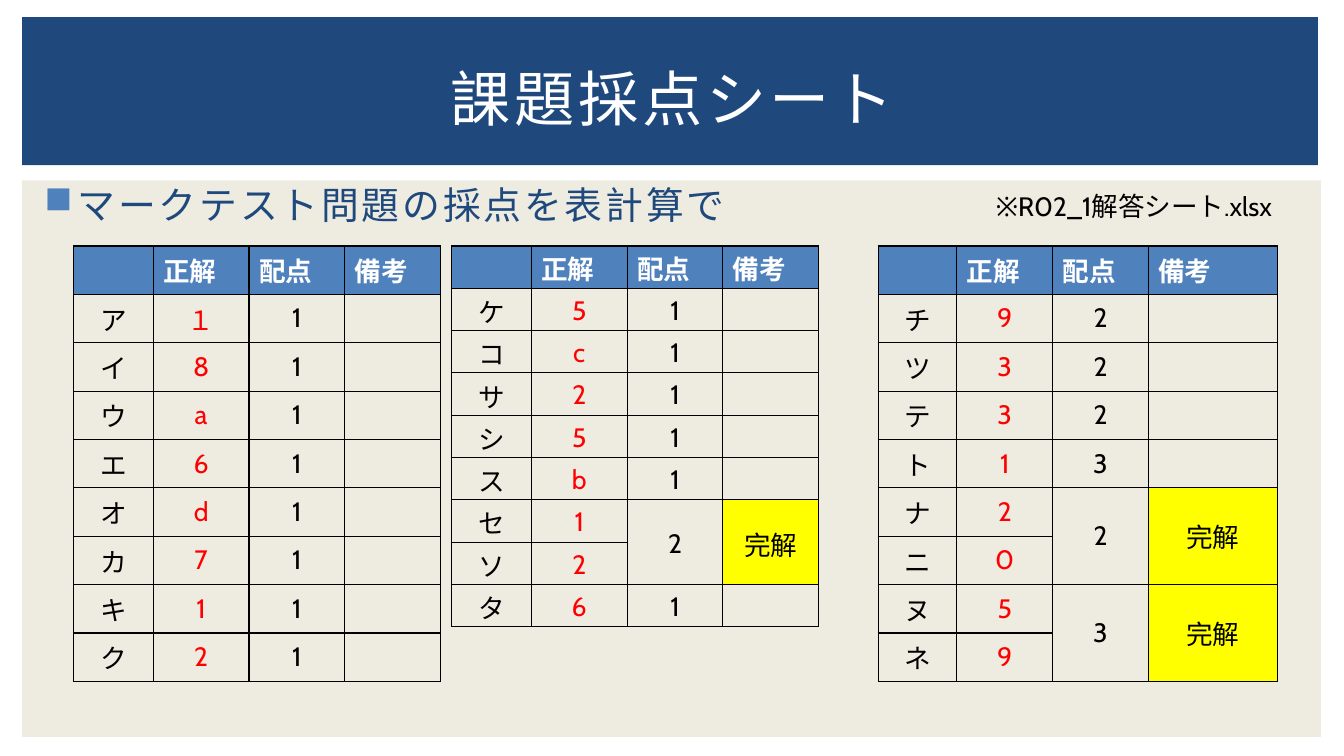
"""Build a slide of answer keys and points for a marked test."""
from dataclasses import dataclass

from pptx import Presentation
from pptx import util as u
from pptx.dml.color import RGBColor
from pptx.enum import shapes, text
from pptx.oxml import parse_xml
from pptx.oxml.ns import nsdecls

MID, LEFT = text.PP_ALIGN.CENTER, text.PP_ALIGN.LEFT


@dataclass(frozen=True)
class Theme:
    """Colours, fonts and type sizes of the slide."""
    navy: str = "1F497D"
    blue: str = "4F81BD"
    sand: str = "EEECE1"
    white: str = "FFFFFF"
    black: str = "000000"
    red: str = "FF0000"
    yellow: str = "FFFF00"
    font: str = "Cabin"
    kanji: str = "Noto Sans CJK JP"
    title: int = 43
    lead: int = 27
    base: int = 19


THEME = Theme()
HEADS = ("", "正解", "配点", "備考")
NARROW = (0.79, 0.95, 0.95, 0.95)
WIDE = (0.78, 0.95, 0.95, 1.28)


def paint(item, color):
    """Fill a shape or cell with one colour."""
    item.fill.solid()
    item.fill.fore_color.rgb = RGBColor.from_string(color)


def style(para, size, color, bold=False, align=LEFT, font=THEME.font):
    """Set the type of a paragraph."""
    para.alignment = align
    para.font.size = u.Pt(size)
    para.font.name = font
    para.font.bold = bold
    para.font.color.rgb = RGBColor.from_string(color)


def add_panel(slide, box, color):
    """Add a plain rectangle."""
    panel = slide.shapes.add_shape(shapes.MSO_SHAPE.RECTANGLE, *map(u.Inches, box))
    panel.shadow.inherit = False
    panel.line.fill.background()
    paint(panel, color)


def add_label(slide, box, words, size, color, pad=(0.13, 0.07), wrap=True,
              align=LEFT, anchor=text.MSO_ANCHOR.TOP, gap=0):
    """Add a line of text and return its paragraph."""
    frame = slide.shapes.add_textbox(*map(u.Inches, box)).text_frame
    frame.word_wrap = wrap
    frame.vertical_anchor = anchor
    frame.margin_left = frame.margin_right = u.Inches(pad[0])
    frame.margin_top = frame.margin_bottom = u.Inches(pad[1])
    para = frame.paragraphs[0]
    run = para.add_run()
    run.text = words
    style(para, size, color, align=align)
    if gap:
        run._r.get_or_add_rPr().set("spc", str(round(gap * 100)))
    return para


def add_bullet(para):
    """Give a paragraph a square bullet and a hanging indent."""
    props = para._p.get_or_add_pPr()
    props.set("marL", str(u.Inches(0.4)))
    props.set("indent", str(u.Inches(-0.33)))
    marks = (f'<a:buClr {nsdecls("a")}><a:srgbClr val="{THEME.blue}"/></a:buClr>',
             f'<a:buChar {nsdecls("a")} char="■"/>')
    for place, mark in enumerate(marks):
        props.insert(place, parse_xml(mark))


def add_border(cell):
    """Draw thin black lines on all sides of a cell."""
    props = cell._tc.get_or_add_tcPr()
    for side in "LRTB":
        props.append(parse_xml(
            f'<a:ln{side} {nsdecls("a")} w="{u.Pt(1)}"><a:solidFill>'
            f'<a:srgbClr val="{THEME.black}"/></a:solidFill></a:ln{side}>'))


def fill_cell(cell, words, color, head, font):
    """Write one heading or body cell."""
    cell.text = words
    style(cell.text_frame.paragraphs[0], THEME.base, color, head,
          LEFT if head else MID, font)
    if head:
        paint(cell, THEME.blue)
    else:
        cell.vertical_anchor = text.MSO_ANCHOR.MIDDLE
        cell.fill.background()


def add_key(slide, left, widths, height, pad, names, keys, points):
    """Add an answer table, where a point of 0 joins the row above."""
    rows = [HEADS] + [(name, key, point.replace("0", ""), "")
                      for name, key, point in zip(names, keys, points)]
    box = (left, 2.44, sum(widths), height * len(rows))
    table = slide.shapes.add_table(len(rows), len(widths), *map(u.Inches, box)).table
    table.first_row = table.horz_banding = False
    for column, width in zip(table.columns, widths):
        column.width = u.Inches(width)
    for down, row in enumerate(rows):
        table.rows[down].height = u.Inches(height)
        for across, words in enumerate(row):
            cell = table.cell(down, across)
            cell.margin_top, cell.margin_bottom = map(u.Inches, pad)
            add_border(cell)
            color = THEME.red if across == 1 else THEME.black
            font = THEME.kanji if down == 0 and across > 1 else THEME.font
            fill_cell(cell, words, THEME.white if down == 0 else color,
                      down == 0, font)
    for down, point in enumerate(points):
        if point == "0":
            note = table.cell(down, 3)
            fill_cell(note, "完解", THEME.black, False, THEME.kanji)
            for across in (2, 3):
                table.cell(down, across).merge(table.cell(down + 1, across))
            paint(note, THEME.yellow)


def main():
    """Build and save the slide."""
    deck = Presentation()
    deck.slide_width, deck.slide_height = u.Inches(13.33), u.Inches(7.5)
    slide = deck.slides.add_slide(deck.slide_layouts[6])
    add_panel(slide, (0.22, 1.79, 12.88, 5.52), THEME.sand)
    add_panel(slide, (0.22, 0.17, 12.85, 1.47), THEME.navy)
    add_bullet(add_label(slide, (0.24, 1.73, 9.4, 0.7), "マークテスト問題の採点を表計算で",
                         THEME.lead, THEME.navy, gap=2))
    add_label(slide, (0.56, 0.39, 12.22, 1.15), "課題採点シート", THEME.title,
              THEME.white, align=MID, anchor=text.MSO_ANCHOR.MIDDLE, gap=2.7)
    add_label(slide, (9.78, 1.83, 3.18, 0.42), "※R02_1解答シート.xlsx",
              THEME.base, THEME.black, pad=(0.1, 0.05), wrap=False)
    loose, tight = (0.05, 0.05), (0.03, 0)
    add_key(slide, 0.73, NARROW, 0.48, loose, "アイウエオカキク", "１8a6d712", "11111111")
    add_key(slide, 8.71, WIDE, 0.48, loose, "チツテトナニヌネ", "93312059", "22232030")
    add_key(slide, 4.48, NARROW, 0.42, tight, "ケコサシスセソタ", "5c25b126", "11111201")
    deck.save("out.pptx")


if __name__ == "__main__":
    main()
